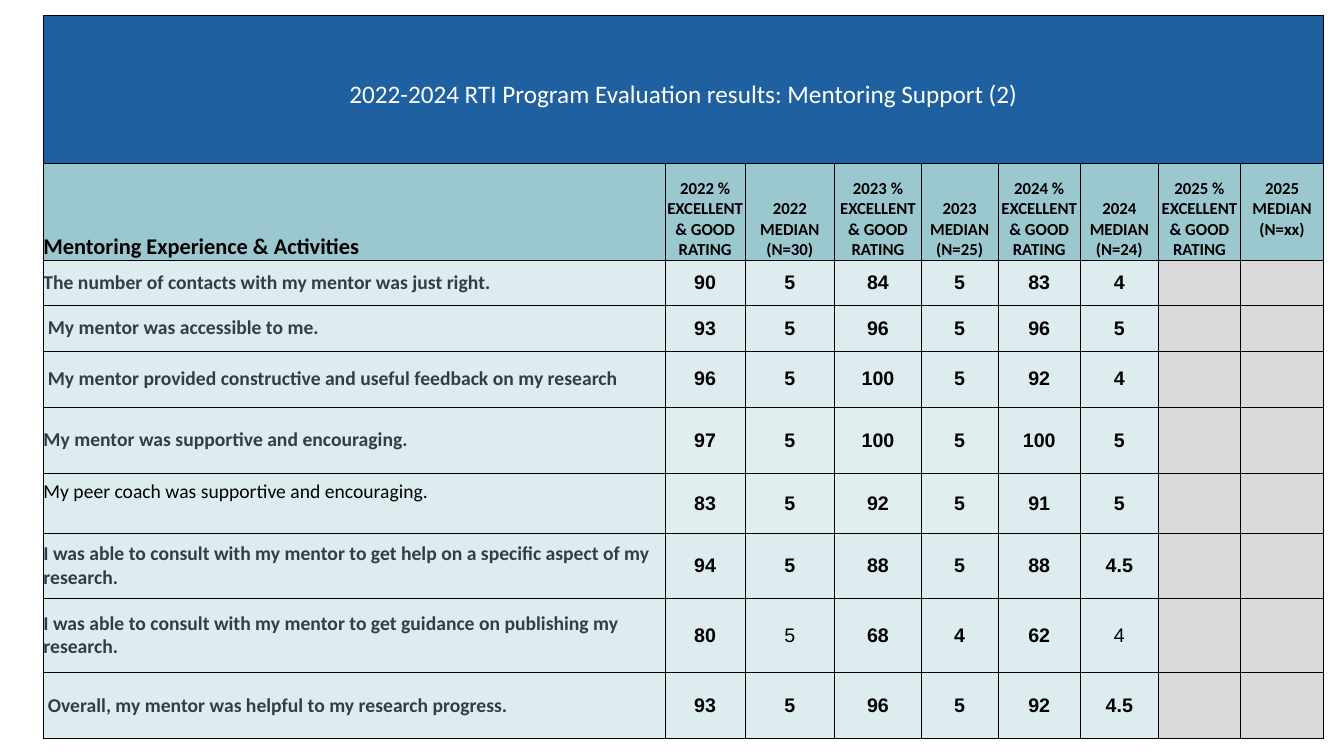
from lxml import etree
from pptx import Presentation
from pptx.dml.color import RGBColor
from pptx.enum.text import MSO_ANCHOR, PP_ALIGN
from pptx.oxml.ns import qn
from pptx.util import Pt

LEFT, CENTER = PP_ALIGN.LEFT, PP_ALIGN.CENTER
TOP, MIDDLE, BOTTOM = MSO_ANCHOR.TOP, MSO_ANCHOR.MIDDLE, MSO_ANCHOR.BOTTOM
BLACK = RGBColor(0x00, 0x00, 0x00)
WHITE = RGBColor(0xFF, 0xFF, 0xFF)
BLUE = RGBColor(0x1F, 0x60, 0xA0)
TEAL = RGBColor(0x9B, 0xC7, 0xCE)
PALE = RGBColor(0xDD, 0xEC, 0xEE)
PALER = RGBColor(0xE0, 0xEE, 0xF0)
GRAY = RGBColor(0xD9, 0xD9, 0xD9)
SLATE = RGBColor(0x33, 0x3D, 0x48)

COLUMN_WIDTHS = [444.2, 57, 64, 62, 54.7, 59, 55.5, 59, 59]
ROW_HEIGHTS = [106, 69.2, 32.3, 32.4, 40.3, 47, 43, 46.4, 53, 47]
SPACE_INDENT = 3.2
HEADER_LINE = 14.6

# Statement, then % rating and median for 2022, 2023 and 2024
RESULTS = [
    ("The number of contacts with my mentor was just right.", 90, 5, 84, 5, 83, 4),
    ("My mentor was accessible to me.", 93, 5, 96, 5, 96, 5),
    ("My mentor provided constructive and useful feedback on my research",
     96, 5, 100, 5, 92, 4),
    ("My mentor was supportive and encouraging.", 97, 5, 100, 5, 100, 5),
    ("My peer coach was supportive and encouraging.", 83, 5, 92, 5, 91, 5),
    ("I was able to consult with my mentor to get help on a specific aspect of my research.",
     94, 5, 88, 5, 88, 4.5),
    ("I was able to consult with my mentor to get guidance on publishing my research.",
     80, 5, 68, 4, 62, 4),
    ("Overall, my mentor was helpful to my research progress.", 93, 5, 96, 5, 92, 4.5),
]
INDENTED_ROWS = {3, 4, 9}
PALER_ROWS = {5, 6}
PEER_COACH_ROW = 6
PLAIN_MEDIANS = {(8, 2), (8, 6)}


def style_cell(cell, fill):
    """Give the cell thin black borders and a solid fill."""
    properties = cell._tc.get_or_add_tcPr()
    for side in ("a:lnL", "a:lnR", "a:lnT", "a:lnB"):
        line = etree.SubElement(properties, qn(side), w=str(Pt(0.5)))
        line_fill = etree.SubElement(line, qn("a:solidFill"))
        etree.SubElement(line_fill, qn("a:srgbClr"), val=str(BLACK))
    cell.fill.solid()
    cell.fill.fore_color.rgb = fill


def write(cell, text, size=14, font="Calibri", color=BLACK, bold=True,
          align=CENTER, anchor=MIDDLE, left=0, top=0, bottom=0):
    cell.margin_left, cell.margin_right = Pt(left), Pt(0)
    cell.margin_top, cell.margin_bottom = Pt(top), Pt(bottom)
    cell.vertical_anchor = anchor
    paragraph = cell.text_frame.paragraphs[0]
    paragraph.alignment = align
    run = paragraph.add_run()
    run.text = text
    run.font.size = Pt(size)
    run.font.name = font
    run.font.bold = bold
    run.font.color.rgb = color


presentation = Presentation()
presentation.slide_width = Pt(960)
presentation.slide_height = Pt(540)
slide = presentation.slides.add_slide(presentation.slide_layouts[6])

table = slide.shapes.add_table(
    len(ROW_HEIGHTS), len(COLUMN_WIDTHS), Pt(31), Pt(10.8),
    Pt(sum(COLUMN_WIDTHS)), Pt(sum(ROW_HEIGHTS))).table
table.first_row = table.horz_banding = False
for column, width in zip(table.columns, COLUMN_WIDTHS):
    column.width = Pt(width)
for row, height in zip(table.rows, ROW_HEIGHTS):
    row.height = Pt(height)

for row in range(len(ROW_HEIGHTS)):
    for column in range(len(COLUMN_WIDTHS)):
        if row == 0:
            fill = BLUE
        elif row == 1:
            fill = TEAL
        elif column >= 7:
            fill = GRAY
        elif row in PALER_ROWS and 1 <= column <= 4:
            fill = PALER
        else:
            fill = PALE
        style_cell(table.cell(row, column), fill)

title = table.cell(0, 0)
title.merge(table.cell(0, len(COLUMN_WIDTHS) - 1))
write(title, "2022-2024 RTI Program Evaluation results: Mentoring Support (2)",
      size=18, color=WHITE, bold=False, top=8)

write(table.cell(1, 0), "Mentoring Experience & Activities", size=16,
      align=LEFT, anchor=BOTTOM)
for index, (year, count) in enumerate(
        [(2022, "30"), (2023, "25"), (2024, "24"), (2025, "xx")]):
    rating, median = table.cell(1, 2 * index + 1), table.cell(1, 2 * index + 2)
    write(rating, f"{year} % EXCELLENT & GOOD RATING", size=12, anchor=BOTTOM)
    write(median, f"{year} MEDIAN (N={count})", size=12, anchor=BOTTOM,
          bottom=HEADER_LINE if year == 2025 else 0)

for row, (statement, *values) in enumerate(RESULTS, start=2):
    if row == PEER_COACH_ROW:
        write(table.cell(row, 0), statement, bold=False, align=LEFT,
              anchor=TOP, top=4.5)
    else:
        write(table.cell(row, 0), statement, color=SLATE, align=LEFT,
              left=SPACE_INDENT if row in INDENTED_ROWS else 0)
    for column, value in enumerate(values, start=1):
        write(table.cell(row, column), str(value), font="Arial",
              bold=(row, column) not in PLAIN_MEDIANS)

presentation.save("out.pptx")
